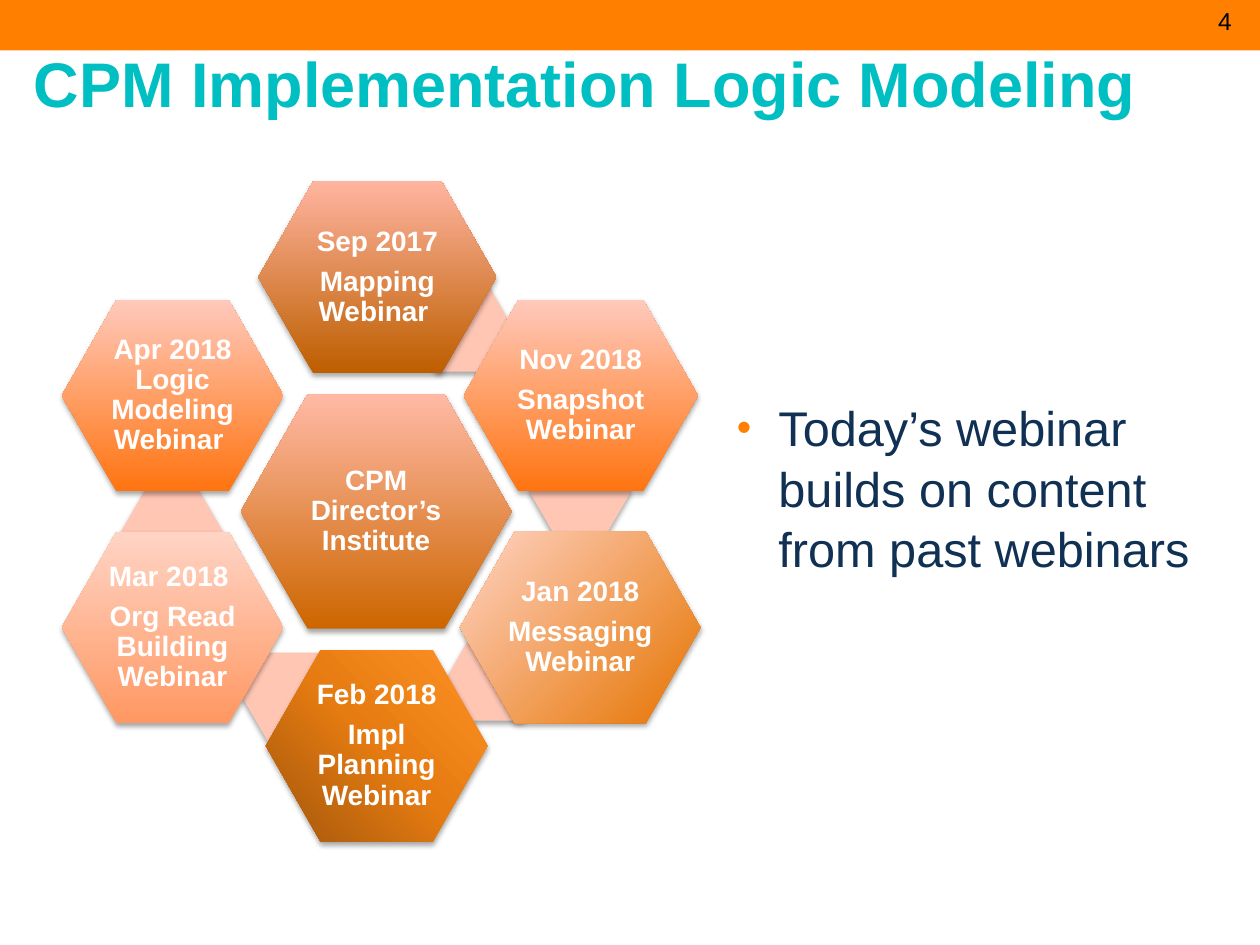
from pptx import Presentation
from pptx.dml.color import RGBColor
from pptx.enum.shapes import MSO_SHAPE
from pptx.enum.text import MSO_ANCHOR, MSO_AUTO_SIZE, PP_ALIGN
from pptx.oxml import parse_xml
from pptx.oxml.ns import nsdecls
from pptx.util import Emu, Pt

PX = 9144  # 100 px to the inch
HEXAGON, RECTANGLE = MSO_SHAPE.HEXAGON, MSO_SHAPE.RECTANGLE
MIDDLE, CENTER = MSO_ANCHOR.MIDDLE, PP_ALIGN.CENTER
FIT_SHAPE = MSO_AUTO_SIZE.SHAPE_TO_FIT_TEXT

FONT = "Arial"
ORANGE = RGBColor(0xFF, 0x7F, 0x01)
TEAL = RGBColor(0x00, 0xBF, 0xC3)
NAVY = RGBColor(0x10, 0x31, 0x54)
PEACH = RGBColor(0xFF, 0xC6, 0xB4)
WHITE = RGBColor(0xFF, 0xFF, 0xFF)
BLACK = RGBColor(0x00, 0x00, 0x00)

TITLE = "CPM Implementation Logic Modeling"
MESSAGE = "Today’s webinar builds on content from past webinars"
PAGE_NUMBER = "4"

UPWARD = '<a:lin ang="16200000" scaled="0"/>'
TO_TOP_LEFT = '<a:lin ang="13500000" scaled="0"/>'
FROM_BOTTOM_LEFT = '<a:path path="circle"><a:fillToRect t="100000" r="100000"/></a:path>'

LINK_SIZE = (81, 70)
LINKS = [(326, 225), (420, 355), (355, 502), (192, 518), (96, 387)]

# box, paragraphs, evenly spaced gradient colours, gradient direction
HEXAGONS = [
    ((191, 313, 215, 186), ["CPM Director’s Institute"], ["CD6600", "FFB9A5"], UPWARD),
    ((205, 144, 189, 152), ["Sep 2017", "Mapping Webinar "], ["BD5E00", "FFB49F"], UPWARD),
    ((368, 238, 186, 152), ["Nov 2018", "Snapshot Webinar"], ["FF7410", "FFC9BC"], UPWARD),
    ((365, 422, 191, 152), ["Jan 2018", "Messaging Webinar"], ["E67300", "FFD4C5"], TO_TOP_LEFT),
    ((211, 516, 176, 152), ["Feb 2018", "Impl Planning Webinar"],
     ["A1560C", "E57B11", "FF9225"], FROM_BOTTOM_LEFT),
    ((49, 422, 176, 152), ["Mar 2018 ", "Org Read Building Webinar"], ["FF9862", "FFD4C5"], UPWARD),
    ((49, 238, 176, 152), ["Apr 2018 Logic Modeling Webinar "], ["FF7410", "FFC9BC"], UPWARD),
]


def emu(box):
    return [Emu(length * PX) for length in box]


def set_font(font, size, color, bold=False):
    font.name, font.size, font.bold = FONT, Pt(size), bold
    font.color.rgb = color


def set_margins(text_frame, margin):
    text_frame.margin_left = text_frame.margin_right = Emu(margin * PX)
    text_frame.margin_top = text_frame.margin_bottom = Emu(margin * PX)


def add_filled_shape(slide, preset, box, color):
    shape = slide.shapes.add_shape(preset, *emu(box))
    shape.shadow.inherit = False
    shape.fill.solid()
    shape.fill.fore_color.rgb = color
    shape.line.fill.background()
    return shape


def add_hexagon(slide, box, adjustment):
    """Add a peach hexagon with a soft shadow below it."""
    shape = add_filled_shape(slide, HEXAGON, box, PEACH)
    shape.adjustments[0] = adjustment
    effects = shape._element.spPr.find("{*}effectLst")
    effects.append(parse_xml(
        f'<a:outerShdw {nsdecls("a")} blurRad="40000" dist="23000" dir="5400000" '
        'rotWithShape="0"><a:srgbClr val="000000"><a:alpha val="35000"/></a:srgbClr>'
        '</a:outerShdw>'))
    return shape


def set_gradient(shape, colors, direction):
    step = 100000 // (len(colors) - 1)
    stops = "".join(
        f'<a:gs pos="{index * step}"><a:srgbClr val="{color}"/></a:gs>'
        for index, color in enumerate(colors))
    properties = shape._element.spPr
    properties.replace(properties.find("{*}solidFill"), parse_xml(
        f'<a:gradFill {nsdecls("a")} rotWithShape="1"><a:gsLst>{stops}</a:gsLst>'
        f'{direction}</a:gradFill>'))


def set_label(shape, lines):
    text_frame = shape.text_frame
    text_frame.text = "\n".join(lines)
    text_frame.word_wrap = True
    text_frame.vertical_anchor = MIDDLE
    set_margins(text_frame, 2)
    for paragraph in text_frame.paragraphs:
        paragraph.alignment = CENTER
        paragraph.line_spacing = 0.9
        paragraph.space_after = Pt(5.6)
        set_font(paragraph.runs[0].font, 16, WHITE, bold=True)


def add_text(slide, box, text, size, color, bold=False):
    text_frame = slide.shapes.add_textbox(*emu(box)).text_frame
    text_frame.text = text
    text_frame.word_wrap = True
    set_font(text_frame.paragraphs[0].runs[0].font, size, color, bold)
    return text_frame


def add_bullet(paragraph):
    properties = paragraph._p.get_or_add_pPr()
    properties.set("marL", str(33 * PX))
    properties.set("indent", str(-33 * PX))
    for xml in (f'<a:buClr {nsdecls("a")}><a:srgbClr val="{ORANGE}"/></a:buClr>',
                f'<a:buSzPct {nsdecls("a")} val="85000"/>',
                f'<a:buFont {nsdecls("a")} typeface="{FONT}"/>',
                f'<a:buChar {nsdecls("a")} char="•"/>'):
        properties.append(parse_xml(xml))


def main():
    presentation = Presentation()
    presentation.slide_width, presentation.slide_height = emu((1000, 750))
    slide = presentation.slides.add_slide(presentation.slide_layouts[6])

    add_filled_shape(slide, RECTANGLE, (0, 0, 1000, 40), ORANGE)
    title = add_text(slide, (17, 7, 997, 117), TITLE, 36, TEAL, bold=True)
    title.vertical_anchor = MIDDLE
    set_margins(title, 10)

    message = add_text(slide, (575, 309, 403, 195), MESSAGE, 27.8, NAVY).paragraphs[0]
    add_bullet(message)
    message.line_spacing = 1.04
    message.space_after = Pt(18)

    for position in LINKS:
        add_hexagon(slide, position + LINK_SIZE, 0.29)
    for box, lines, colors, direction in HEXAGONS:
        hexagon = add_hexagon(slide, box, 0.286)
        set_gradient(hexagon, colors, direction)
        set_label(hexagon, lines)

    page_number = add_text(slide, (957, 0, 31, 34), PAGE_NUMBER, 14, BLACK)
    page_number.word_wrap = False
    page_number.auto_size = FIT_SHAPE
    presentation.save("out.pptx")


if __name__ == "__main__":
    main()
